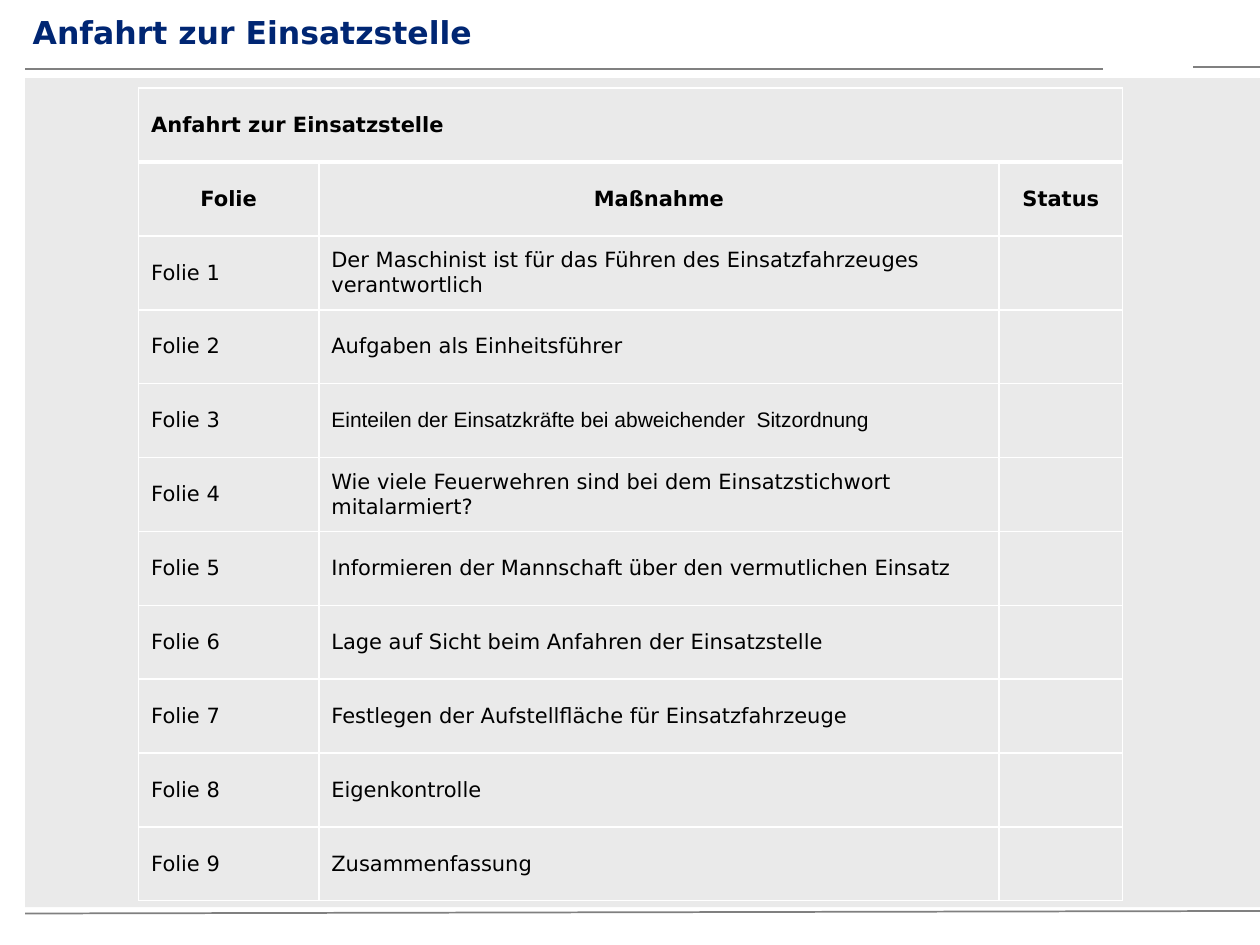
"""Builds the checklist slide 'Anfahrt zur Einsatzstelle'."""
from lxml.etree import SubElement
from pptx import Presentation
from pptx.dml.color import RGBColor as Rgb
from pptx.enum.shapes import MSO_CONNECTOR as Connector, MSO_SHAPE as Shape
from pptx.enum.text import MSO_ANCHOR as Anchor, PP_ALIGN as Align
from pptx.oxml.ns import qn
from pptx.util import Inches, Pt

COLORS = {"panel": "EAEAEA", "rule": "808080", "grid": "FFFFFF",
          "title": "002673", "text": "000000"}
HEADING = "Anfahrt zur Einsatzstelle"
COLUMNS = ["Folie", "Maßnahme", "Status"]
COLUMN_WIDTHS = [1.43, 5.4, 0.98]
ROW_HEIGHT = 6.45 / 11
MEASURES = [
    "Der Maschinist ist für das Führen des Einsatzfahrzeuges verantwortlich",
    "Aufgaben als Einheitsführer",
    "Einteilen der Einsatzkräfte bei abweichender  Sitzordnung",
    "Wie viele Feuerwehren sind bei dem Einsatzstichwort mitalarmiert?",
    "Informieren der Mannschaft über den vermutlichen Einsatz",
    "Lage auf Sicht beim Anfahren der Einsatzstelle",
    "Festlegen der Aufstellfläche für Einsatzfahrzeuge",
    "Eigenkontrolle",
    "Zusammenfassung",
]
ARIAL_MEASURE = MEASURES[2]


def write(frame, text, size=12, color="text", bold=False, align=Align.LEFT,
          font="DejaVu Sans"):
    paragraph = frame.paragraphs[0]
    paragraph.alignment = align
    run = paragraph.add_run()
    run.text = text
    run.font.name = font
    run.font.size = Pt(size)
    run.font.bold = bold
    run.font.color.rgb = Rgb.from_string(COLORS[color])


def add_border(cell, side, width):
    line = SubElement(cell._tc.get_or_add_tcPr(), qn(f"a:ln{side}"), w=str(Pt(width)))
    fill = SubElement(line, qn("a:solidFill"))
    SubElement(fill, qn("a:srgbClr"), val=COLORS["grid"])


deck = Presentation()
deck.slide_width, deck.slide_height = Inches(10), Inches(7.5)
slide = deck.slides.add_slide(deck.slide_layouts[6])

panel = slide.shapes.add_shape(Shape.RECTANGLE, Inches(0.2), Inches(0.62),
                               Inches(9.8), Inches(6.58))
panel.shadow.inherit = False
panel.fill.solid()
panel.fill.fore_color.rgb = Rgb.from_string(COLORS["panel"])
panel.line.fill.background()

for ends in [(0.2, 0.55, 8.75, 0.55), (0.2, 7.25, 10, 7.23), (10, 0.53, 9.47, 0.53)]:
    rule = slide.shapes.add_connector(Connector.STRAIGHT, *map(Inches, ends))
    rule.line.color.rgb = Rgb.from_string(COLORS["rule"])
    rule.line.width = Pt(1)
    SubElement(rule._element.spPr, qn("a:effectLst"))

rows = [[HEADING, "", ""], COLUMNS]
rows += [[f"Folie {number}", measure, ""] for number, measure in enumerate(MEASURES, 1)]
checklist = slide.shapes.add_table(
    len(rows), len(COLUMNS), Inches(1.1), Inches(0.7),
    Inches(sum(COLUMN_WIDTHS)), Inches(ROW_HEIGHT * len(rows))).table
checklist.first_row = checklist.horz_banding = False
for column, width in zip(checklist.columns, COLUMN_WIDTHS):
    column.width = Inches(width)

for r, row in enumerate(rows):
    checklist.rows[r].height = Inches(ROW_HEIGHT)
    for c, text in enumerate(row):
        cell = checklist.cell(r, c)
        cell.vertical_anchor = Anchor.MIDDLE
        for side in "LRTB":
            thick = (r, side) in [(0, "B"), (1, "T")]
            add_border(cell, side, 3 if thick else 1)
        cell.fill.background()
        if text:
            write(cell.text_frame, text, bold=r < 2,
                  align=Align.CENTER if r == 1 else Align.LEFT,
                  font="Arial" if text == ARIAL_MEASURE else "DejaVu Sans")
checklist.cell(0, 0).merge(checklist.cell(0, len(COLUMNS) - 1))

title = slide.shapes.add_textbox(Inches(0.26), Inches(0.1), Inches(8.25), Inches(0.41))
title_frame = title.text_frame
title_frame.word_wrap = True
title_frame.margin_left = title_frame.margin_right = 0
title_frame.margin_top = title_frame.margin_bottom = 0
write(title_frame, HEADING, size=18, color="title", bold=True)

deck.save("out.pptx")
